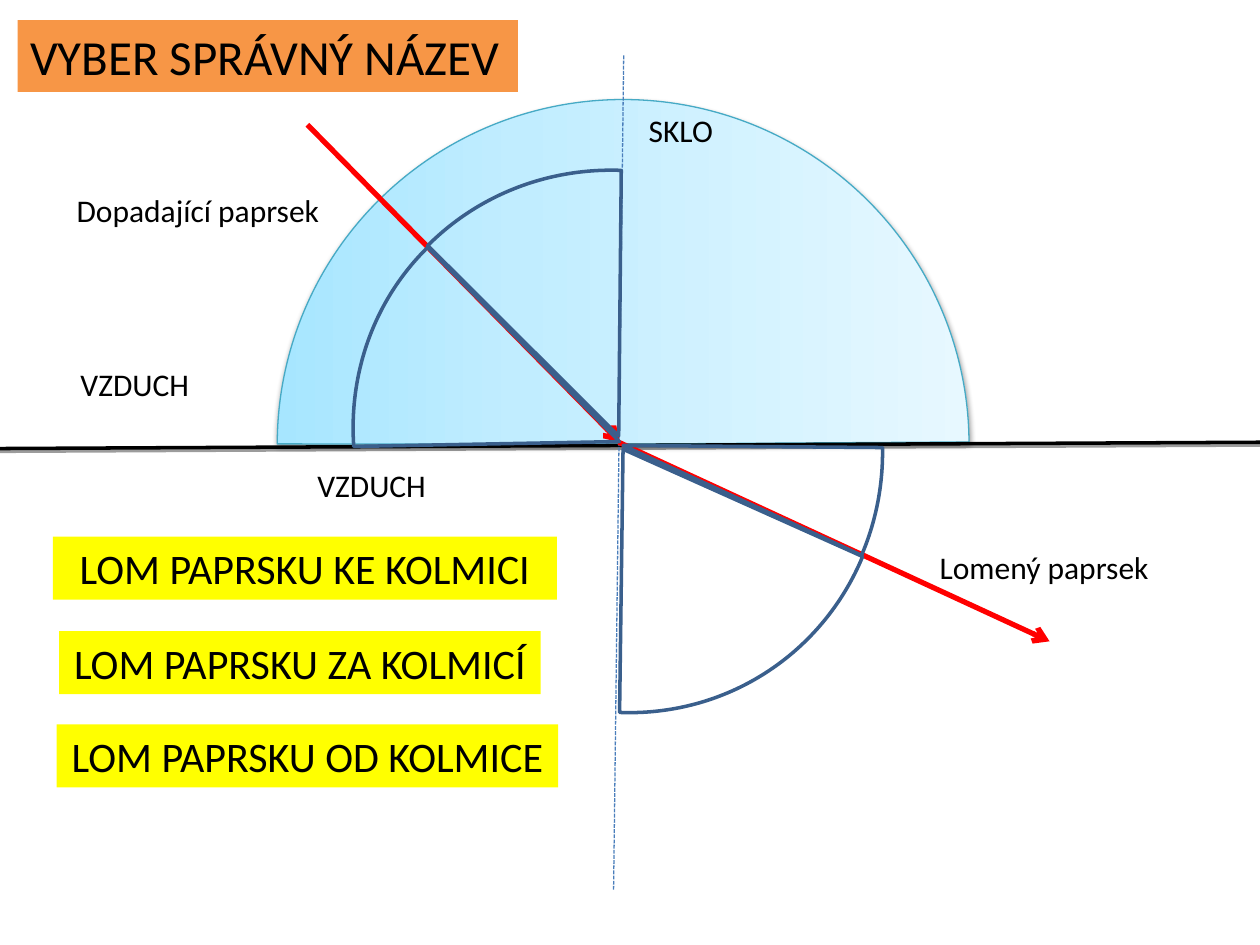
from dataclasses import dataclass

from lxml import etree
from pptx import Presentation
from pptx.dml.color import RGBColor
from pptx.enum.dml import MSO_LINE
from pptx.enum.shapes import MSO_CONNECTOR, MSO_SHAPE
from pptx.enum.text import MSO_AUTO_SIZE, PP_ALIGN
from pptx.oxml import parse_xml
from pptx.oxml.ns import nsdecls, qn
from pptx.util import Inches, Pt

STRAIGHT = MSO_CONNECTOR.STRAIGHT
PIE = MSO_SHAPE.PIE
LEFT, CENTER = PP_ALIGN.LEFT, PP_ALIGN.CENTER
DASH = MSO_LINE.SQUARE_DOT
FIT = MSO_AUTO_SIZE.SHAPE_TO_FIT_TEXT
FONT = "Calibri"
COLORS = {
    "black": "000000",
    "ray": "FF0000",
    "normal": "4A7EBB",
    "angle": "3A5F8C",
    "glass_edge": "46AAC5",
    "title": "F79646",
    "option": "FFFF00",
}
GLASS_STOPS = [(0, "A7E6FF"), (35, "C1EDFF"), (100, "E7F8FF")]


@dataclass
class Ray:
    start: tuple[float, float]
    end: tuple[float, float]
    color: str
    width: float
    arrow: bool = False
    dashed: bool = False
    shadow: bool = False


@dataclass
class Sector:
    box: tuple[float, float, float, float]
    rotation: float
    angles: tuple[float, float]
    color: str = "angle"
    width: float = 2


@dataclass
class Label:
    text: str
    box: tuple[float, float, float, float]
    size: int = 18
    fill: str | None = None
    align: PP_ALIGN = LEFT
    wrap: bool = False


GLASS = Sector((2.21, 0.78, 5.47, 5.49), 90, (90.04, 269.63), "glass_edge", 0.75)
RAYS = [
    Ray((0, 3.56), (10, 3.51), "black", 2, shadow=True),
    Ray((4.95, 0.44), (4.87, 7.06), "normal", 0.75, dashed=True),
    Ray((2.44, 0.99), (4.92, 3.51), "ray", 3, arrow=True),
    Ray((4.91, 3.51), (8.33, 5.09), "ray", 3, arrow=True),
]
ANGLES = [
    Sector((2.84, 1.49, 4.21, 4.09), 240.3, (120.16, 144.43)),
    Sector((2.77, 1.38, 4.28, 4.16), 44.1, (180.81, 226.45)),
    Sector((2.84, 1.52, 4.21, 4.09), 240.3, (143.83, 210.45)),
    Sector((2.75, 1.45, 4.33, 4.11), 44.1, (134.82, 181.26)),
]
LABELS = [
    Label("Dopadající paprsek", (0.51, 1.47, 2.15, 0.4)),
    Label("Lomený paprsek", (7.36, 4.3, 1.94, 0.4)),
    Label("SKLO", (5.05, 0.83, 0.72, 0.4)),
    Label("VZDUCH", (2.42, 3.65, 1.07, 0.4)),
    Label("VZDUCH", (0.54, 2.85, 1.07, 0.4)),
    Label("VYBER SPRÁVNÝ NÁZEV", (0.14, 0.16, 3.97, 0.57), 28, "title"),
    Label("LOM PAPRSKU OD KOLMICE", (0.45, 5.75, 3.98, 0.5), 24, "option", CENTER),
    Label("LOM PAPRSKU KE KOLMICI", (0.42, 4.26, 4, 0.5), 24, "option", CENTER, True),
    Label("LOM PAPRSKU ZA KOLMICÍ", (0.47, 5.01, 3.82, 0.5), 24, "option", CENTER),
]


def rgb(name: str) -> RGBColor:
    return RGBColor.from_string(COLORS[name])


def set_line(line, color: str, width: float) -> None:
    line.color.rgb = rgb(color)
    line.width = Pt(width)


def drop_shadow(sp_pr, blur: float) -> None:
    """Append a soft shadow that falls straight down; blur is in points."""
    sp_pr.append(parse_xml(
        f'<a:effectLst {nsdecls("a")}><a:outerShdw blurRad="{Pt(blur)}" '
        f'dist="{Pt(1.6)}" dir="5400000" rotWithShape="0">'
        f'<a:srgbClr val="{COLORS["black"]}"><a:alpha val="38000"/></a:srgbClr>'
        '</a:outerShdw></a:effectLst>'))


def draw_sector(slide, sector: Sector):
    s = slide.shapes.add_shape(PIE, *map(Inches, sector.box))
    s.rotation = sector.rotation
    for i, angle in enumerate(sector.angles):
        s.adjustments[i] = angle * 0.6  # 60000ths of a degree, scaled by 100000
    s.fill.background()
    set_line(s.line, sector.color, sector.width)
    return s


def draw_glass(slide) -> None:
    s = draw_sector(slide, GLASS)
    sp_pr = s._element.spPr
    stops = "".join(f'<a:gs pos="{pos * 1000}"><a:srgbClr val="{color}"/></a:gs>'
                    for pos, color in GLASS_STOPS)
    sp_pr.replace(sp_pr.find(qn("a:noFill")), parse_xml(
        f'<a:gradFill {nsdecls("a")} rotWithShape="1"><a:gsLst>{stops}</a:gsLst>'
        '<a:lin ang="16200000" scaled="1"/></a:gradFill>'))
    drop_shadow(sp_pr, 3.1)


def draw_ray(slide, ray: Ray) -> None:
    c = slide.shapes.add_connector(STRAIGHT, *map(Inches, ray.start + ray.end))
    set_line(c.line, ray.color, ray.width)
    if ray.dashed:
        c.line.dash_style = DASH
    sp_pr = c._element.spPr
    if ray.arrow:
        etree.SubElement(sp_pr.find(qn("a:ln")), qn("a:tailEnd"), type="arrow")
    if ray.shadow:
        drop_shadow(sp_pr, 0)
    else:
        etree.SubElement(sp_pr, qn("a:effectLst"))


def draw_label(slide, label: Label) -> None:
    box = slide.shapes.add_textbox(*map(Inches, label.box))
    if label.fill:
        box.fill.solid()
        box.fill.fore_color.rgb = rgb(label.fill)
    tf = box.text_frame
    tf.word_wrap = label.wrap
    tf.auto_size = FIT
    p = tf.paragraphs[0]
    p.alignment = label.align
    r = p.add_run()
    r.text = label.text
    for name, value in {"name": FONT, "size": Pt(label.size)}.items():
        setattr(r.font, name, value)
    r.font.color.rgb = rgb("black")


def main() -> None:
    prs = Presentation()
    prs.slide_width, prs.slide_height = Inches(10), Inches(7.5)
    slide = prs.slides.add_slide(prs.slide_layouts[6])
    draw_glass(slide)
    for ray in RAYS:
        draw_ray(slide, ray)
    for angle in ANGLES:
        draw_sector(slide, angle).shadow.inherit = False
    for label in LABELS:
        draw_label(slide, label)
    prs.save("out.pptx")


if __name__ == "__main__":
    main()
